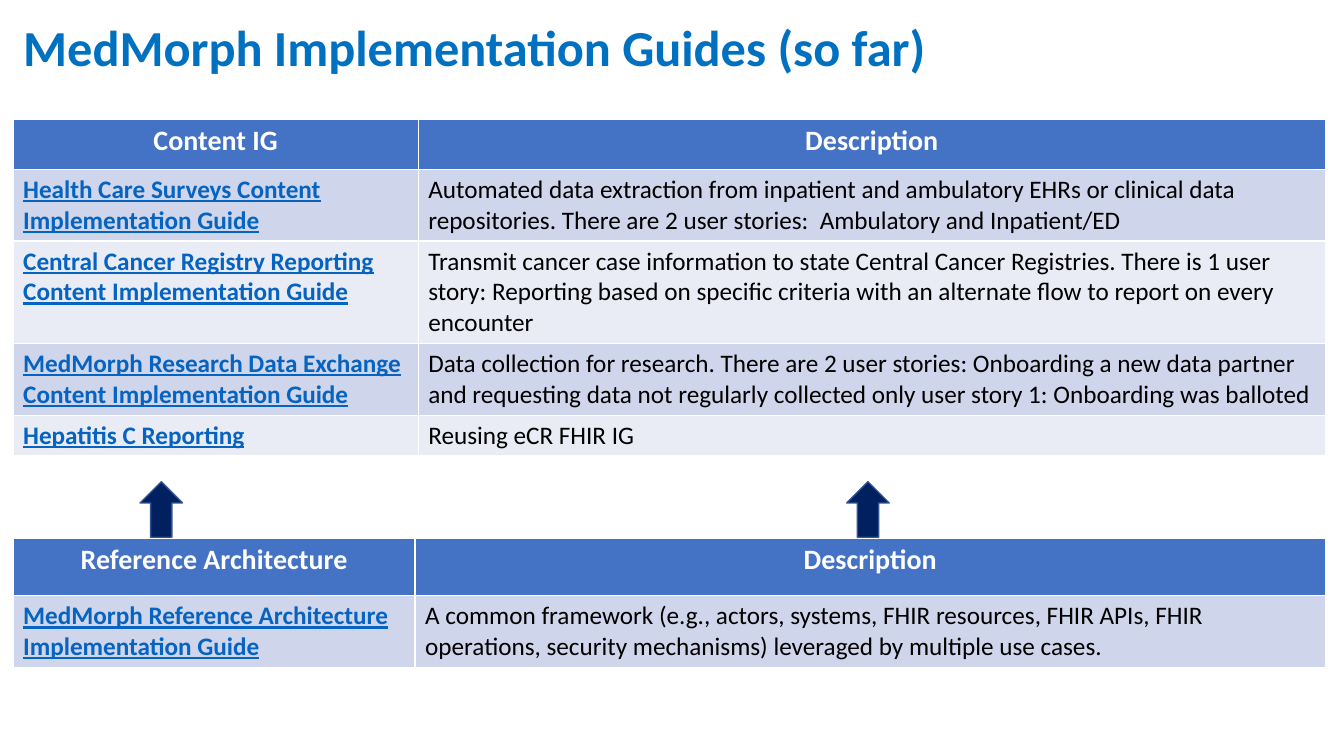
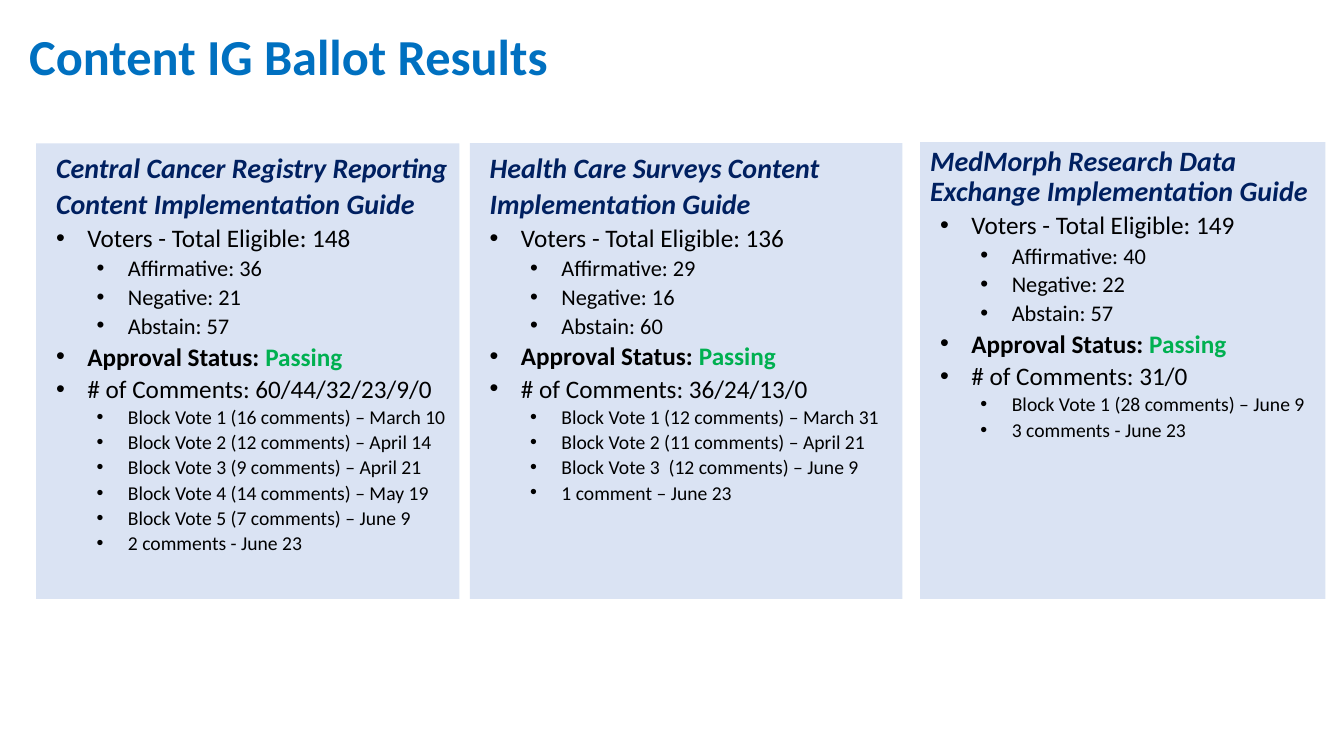
import pptx
import pptx.util
import pptx.dml.color
import pptx.enum.shapes
import pptx.enum.text
import lxml.etree
from dataclasses import dataclass

Cm, Pt = pptx.util.Cm, pptx.util.Pt
Align = pptx.enum.text.PP_ALIGN
Anchor = pptx.enum.text.MSO_ANCHOR
Shape = pptx.enum.shapes.MSO_SHAPE


@dataclass(frozen=True)
class Theme:
    face: str = "Calibri"
    blue: str = "0070C0"
    navy: str = "002060"
    edge: str = "325491"
    head: str = "4472C4"
    bands: tuple = ("CFD5EA", "E9EBF5")
    link: str = "0563C1"
    panel: str = "DAE3F3"
    green: str = "00B050"
    black: str = "000000"
    white: str = "FFFFFF"
    title: int = 36
    large: int = 20
    body: int = 18
    vote: int = 16
    note: int = 14


theme = Theme()

# Content: guides
GUIDES = [
    ("Content IG", "Description"),
    ("Health Care Surveys Content Implementation Guide",
     "Automated data extraction from inpatient and ambulatory EHRs or clinical data "
     "repositories. There are 2 user stories:  Ambulatory and Inpatient/ED"),
    ("Central Cancer Registry Reporting Content Implementation Guide",
     "Transmit cancer case information to state Central Cancer Registries. There is 1 user "
     "story: Reporting based on specific criteria with an alternate flow to report on every "
     "encounter"),
    ("MedMorph Research Data Exchange Content Implementation Guide",
     "Data collection for research. There are 2 user stories: Onboarding a new data partner "
     "and requesting data not regularly collected only user story 1: Onboarding was balloted"),
    ("Hepatitis C Reporting", "Reusing eCR FHIR IG"),
]
BASE = [
    ("Reference Architecture", "Description"),
    ("MedMorph Reference Architecture Implementation Guide",
     "A common framework (e.g., actors, systems, FHIR resources, FHIR APIs, FHIR "
     "operations, security mechanisms) leveraged by multiple use cases."),
]

# Content: ballots, with votes as affirmative, negative, abstain
BALLOTS = [
    dict(name="Central Cancer Registry Reporting Content Implementation Guide",
         box=(0.91, 3.61, 10.67, 11.48), lead=(0.25, 1.07, 0),
         total=148, votes=(36, 21, 57), left="60/44/32/23/9/0",
         notes=["Block Vote 1 (16 comments) – March 10",
                "Block Vote 2 (12 comments) – April 14",
                "Block Vote 3 (9 comments) – April 21",
                "Block Vote 4 (14 comments) – May 19",
                "Block Vote 5 (7 comments) – June 9",
                "2 comments - June 23"]),
    dict(name="Health Care Surveys Content Implementation Guide",
         box=(11.84, 3.61, 10.9, 11.48), lead=(0.25, 1.07, 0),
         total=136, votes=(29, 16, 60), left="36/24/13/0",
         notes=["Block Vote 1 (12 comments) – March 31",
                "Block Vote 2 (11 comments) – April 21",
                "Block Vote 3  (12 comments) – June 9",
                "1 comment – June 23"]),
    dict(name="MedMorph Research Data Exchange Implementation Guide",
         box=(23.19, 3.58, 10.21, 11.51), lead=(0, 0.9, 10),
         total=149, votes=(40, 22, 57), left="31/0",
         notes=["Block Vote 1 (28 comments) – June 9",
                "3 comments - June 23"]),
]


# Shared helpers
def color(code):
    return pptx.dml.color.RGBColor.from_string(code)


def paint(item, code):
    item.fill.solid()
    item.fill.fore_color.rgb = color(code)


def style(para, size, code, bold=False, slant=False, line=None):
    for part in (para, *para.runs):
        font = part.font
        font.name, font.size = theme.face, Pt(size)
        font.bold, font.italic, font.underline = bold, slant, line
        font.color.rgb = color(code)


def place(shape, box):
    shape.left, shape.top, shape.width, shape.height = map(Cm, box)


def start(deck, layout, text, box):
    slide = deck.slides.add_slide(deck.slide_layouts[layout])
    title = slide.shapes.title
    place(title, box)
    frame = title.text_frame
    frame.text = text
    frame.auto_size = pptx.enum.text.MSO_AUTO_SIZE.NONE
    frame.vertical_anchor = Anchor.MIDDLE
    para = frame.paragraphs[0]
    para.alignment, para.line_spacing = Align.LEFT, 0.9
    style(para, theme.title, theme.blue, bold=True)
    return slide


# Guide tables
def grid(slide, data, top, cols, first):
    high = [first] + [1.03] * (len(data) - 1)
    table = slide.shapes.add_table(
        len(data), len(cols), Cm(0.33), Cm(top), Cm(sum(cols)), Cm(sum(high))).table
    for col, width in zip(table.columns, cols):
        col.width = Cm(width)
    for r, texts in enumerate(data):
        table.rows[r].height = Cm(high[r])
        for c, text in enumerate(texts):
            cell = table.cell(r, c)
            cell.text = text
            para = cell.text_frame.paragraphs[0]
            if r == 0:
                paint(cell, theme.head)
                para.alignment = Align.CENTER
                style(para, theme.large, theme.white, bold=True)
                continue
            paint(cell, theme.bands[(r - 1) % 2])
            if c == 0:
                style(para, theme.body, theme.link, bold=True, line=True)
            else:
                style(para, theme.body, theme.black)


def arrow(slide, left):
    shape = slide.shapes.add_shape(
        Shape.UP_ARROW, Cm(left), Cm(12.14), Cm(1.07), Cm(1.4))
    shape.shadow.inherit = False
    paint(shape, theme.navy)
    shape.line.color.rgb = color(theme.edge)
    shape.line.width = Pt(1)


# Ballot panels
def mark(para, left, hang=0.0):
    props = para._p.get_or_add_pPr()
    props.set("marL", str(Cm(left)))
    props.set("indent", str(Cm(-hang)))
    space = "{http://schemas.openxmlformats.org/drawingml/2006/main}"
    if hang:
        face = lxml.etree.Element(space + "buFont", typeface="Arial")
        nodes = [face, lxml.etree.Element(space + "buChar", char="•")]
    else:
        nodes = [lxml.etree.Element(space + "buNone")]
    spot = props.find(space + "defRPr")
    for node in nodes:
        spot.addprevious(node)


def write(frame, text, level, size, code=theme.black, bold=False, slant=False,
          lead=None):
    para = frame.paragraphs[0] if lead else frame.add_paragraph()
    para.add_run().text = text
    para.level, para.alignment = level, Align.LEFT
    inset, para.line_spacing, before = lead or (None, 1.07, 0)
    para.space_before, para.space_after = Pt(before), Pt(0)
    style(para, size, code, bold, slant)
    if lead:
        mark(para, inset)
    else:
        mark(para, (1.04, 2.06)[level], 0.79)
    return para


def panel(shape, data):
    place(shape, data["box"])
    paint(shape, theme.panel)
    shape.line.fill.background()
    frame = shape.text_frame
    frame.word_wrap = True
    frame.auto_size = pptx.enum.text.MSO_AUTO_SIZE.NONE
    frame.vertical_anchor = Anchor.TOP
    write(frame, data["name"], 0, theme.large, theme.navy, True, True, data["lead"])
    write(frame, f"Voters - Total Eligible: {data['total']}", 0, theme.body)
    for name, count in zip(("Affirmative", "Negative", "Abstain"), data["votes"]):
        write(frame, f"{name}: {count}", 1, theme.vote)
    para = write(frame, "Approval Status: ", 0, theme.body, bold=True)
    state = para.add_run()
    state.text = "Passing"
    font = state.font
    font.name, font.size, font.bold = theme.face, Pt(theme.body), True
    font.color.rgb = color(theme.green)
    write(frame, f"# of Comments: {data['left']}", 0, theme.body)
    for note in data["notes"]:
        write(frame, note, 1, theme.note)


def main():
    deck = pptx.Presentation()
    deck.slide_width, deck.slide_height = Cm(33.87), Cm(19.05)

    # Guides
    slide = start(deck, 5, "MedMorph Implementation Guides (so far)",
                  (0.33, -0.58, 30, 3.68))
    grid(slide, GUIDES, 3, (10.21, 22.86), 1.27)
    grid(slide, BASE, 13.56, (10.13, 22.94), 1.45)
    for left in (3.53, 21.34):
        arrow(slide, left)

    # Ballots
    slide = start(deck, 1, "Content IG Ballot Results", (0.48, -0.64, 32.1, 4.24))
    panel(slide.placeholders[1], BALLOTS[0])
    for data in BALLOTS[1:]:
        shape = slide.shapes.add_shape(Shape.RECTANGLE, *map(Cm, data["box"]))
        shape.shadow.inherit = False
        panel(shape, data)

    deck.save("out.pptx")


if __name__ == "__main__":
    main()
